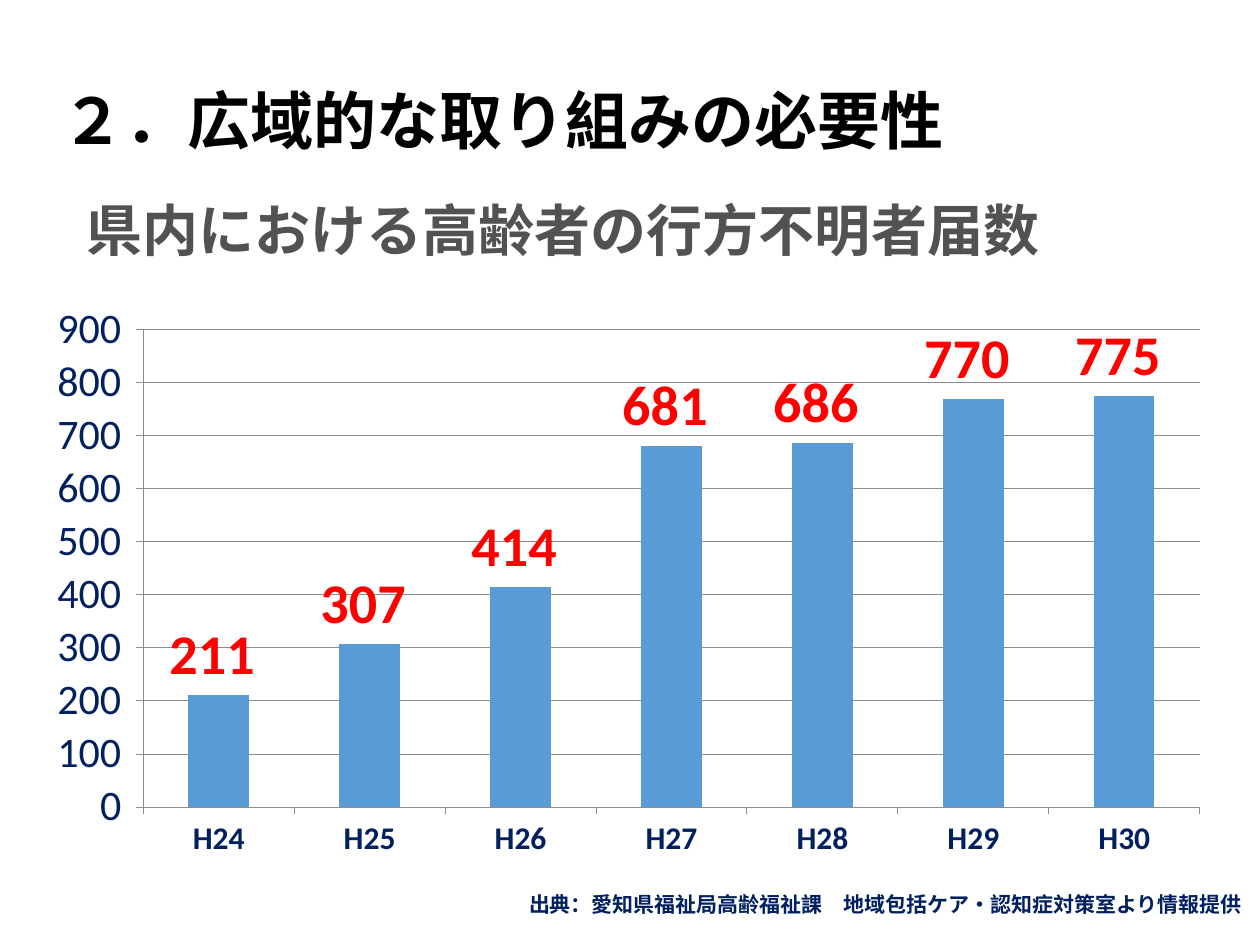
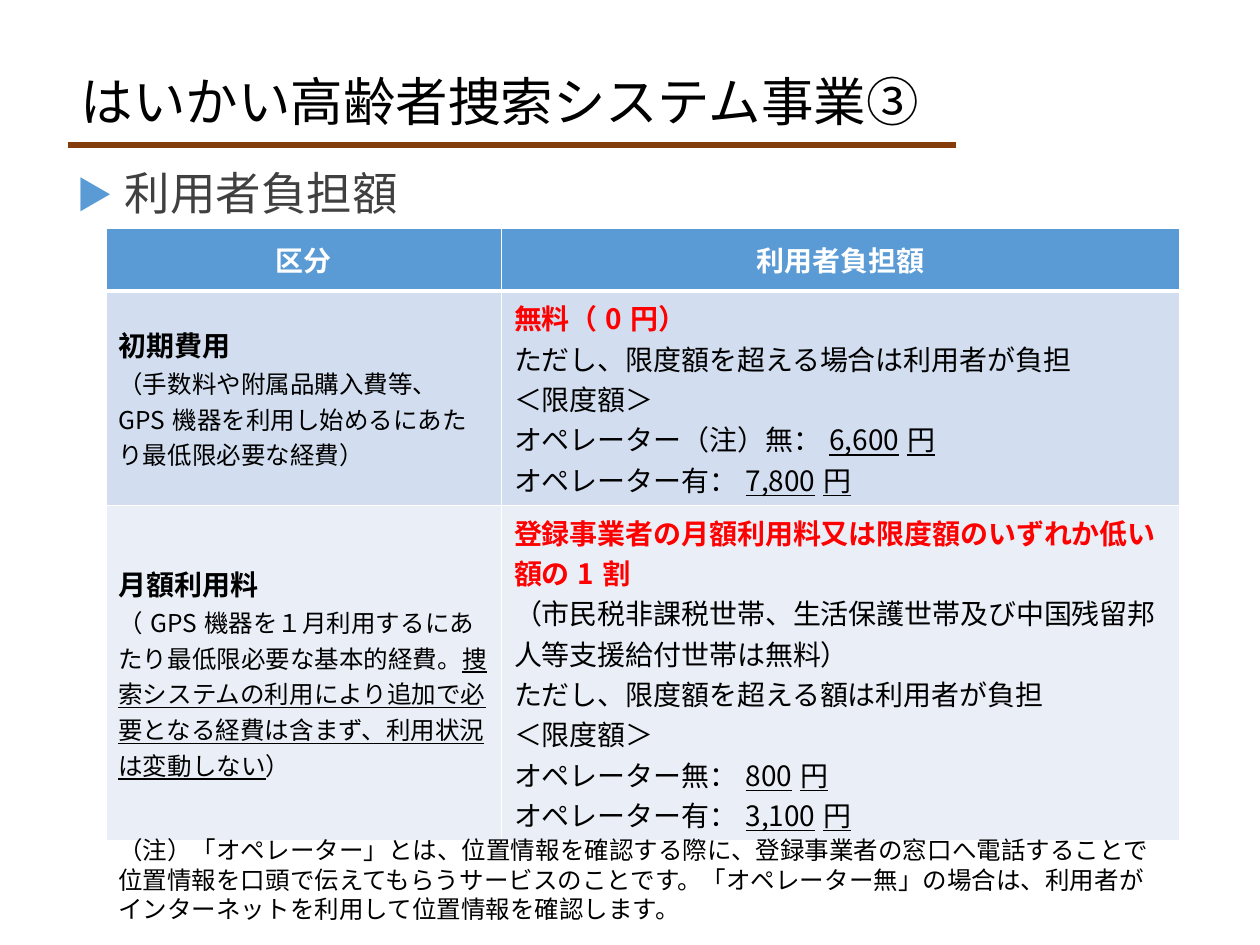
from dataclasses import dataclass
from typing import Any

from lxml import etree
from pptx import Presentation
from pptx.chart.data import CategoryChartData
from pptx.dml.color import RGBColor
from pptx.enum.chart import XL_CHART_TYPE, XL_LABEL_POSITION, XL_TICK_MARK
from pptx.enum.shapes import MSO_CONNECTOR
from pptx.enum.text import MSO_ANCHOR, MSO_AUTO_SIZE, PP_ALIGN
from pptx.oxml.ns import qn
from pptx.util import Inches, Pt

LEFT, CENTER, RIGHT = PP_ALIGN.LEFT, PP_ALIGN.CENTER, PP_ALIGN.RIGHT
TOP, MIDDLE = MSO_ANCHOR.TOP, MSO_ANCHOR.MIDDLE
FIXED, GROW = MSO_AUTO_SIZE.NONE, MSO_AUTO_SIZE.SHAPE_TO_FIT_TEXT
TICK_OUTSIDE = XL_TICK_MARK.OUTSIDE
COLUMN_CLUSTERED = XL_CHART_TYPE.COLUMN_CLUSTERED
OUTSIDE_END = XL_LABEL_POSITION.OUTSIDE_END
STRAIGHT = MSO_CONNECTOR.STRAIGHT

SLIDE_WIDTH, SLIDE_HEIGHT = Inches(10), Inches(7.5)
COLUMN, ROW = SLIDE_WIDTH / 100, SLIDE_HEIGHT / 75
TITLE_ONLY = 5
TEXT_FONT, CHART_FONT = "Noto Sans CJK JP", "Calibri"
COUNT_FORMAT = r"#,##0_);[Red]\(#,##0\)"
COLORS = {
    "black": "000000",
    "white": "FFFFFF",
    "subtitle": "525252",
    "body": "404040",
    "navy": "002060",
    "red": "FF0000",
    "accent": "5B9BD5",
    "rule": "843C0B",
    "axis": "8C8C8C",
    "initial": "D2DEEF",
    "monthly": "EAEFF7",
}


@dataclass(frozen=True)
class Box:
    column: float
    row: float
    columns: float
    rows: float

    def lengths(self) -> tuple[int, int, int, int]:
        return (int(self.column * COLUMN), int(self.row * ROW),
                int(self.columns * COLUMN), int(self.rows * ROW))


@dataclass(frozen=True)
class Line:
    """Every second segment is underlined."""
    segments: tuple[str, ...]
    size: float
    color: str = "black"
    bold: bool = False
    align: Any = LEFT
    spacing: float = 1.0
    bullet: str = ""


@dataclass(frozen=True)
class Cell:
    fill: str
    lines: tuple[Line, ...]


def rgb(name: str) -> RGBColor:
    return RGBColor.from_string(COLORS[name])


def style_font(font: Any, name: str, size: float, color: str, bold: bool = False) -> None:
    font.name = name
    font.size = Pt(size)
    font.bold = bold
    font.color.rgb = rgb(color)


def add_bullet(paragraph: Any, character: str) -> None:
    properties = paragraph._p.get_or_add_pPr()
    properties.set("marL", str(Inches(0.38)))
    properties.set("indent", str(Inches(-0.38)))
    color = etree.SubElement(properties, qn("a:buClr"))
    etree.SubElement(color, qn("a:srgbClr"), val=COLORS["accent"])
    etree.SubElement(properties, qn("a:buSzPct"), val="80000")
    etree.SubElement(properties, qn("a:buFont"), typeface=TEXT_FONT)
    etree.SubElement(properties, qn("a:buChar"), char=character)
    paragraph.space_before = Pt(10)


def write_lines(frame: Any, lines: tuple[Line, ...], anchor: Any = TOP) -> None:
    frame.word_wrap = True
    frame.vertical_anchor = anchor
    for index, line in enumerate(lines):
        paragraph = frame.add_paragraph() if index else frame.paragraphs[0]
        if line.bullet:
            add_bullet(paragraph, line.bullet)
        paragraph.alignment = line.align
        paragraph.line_spacing = line.spacing
        style_font(paragraph.font, TEXT_FONT, line.size, line.color, line.bold)
        defaults = paragraph._p.pPr.find(qn("a:defRPr"))
        etree.SubElement(defaults, qn("a:ea"), typeface=TEXT_FONT)
        for position, segment in enumerate(line.segments):
            run = paragraph.add_run()
            run.text = segment
            if position % 2:
                run.font.underline = True


def add_titled_slide(presentation: Any, box: Box, title: Line, anchor: Any) -> Any:
    slide = presentation.slides.add_slide(presentation.slide_layouts[TITLE_ONLY])
    shape = slide.shapes.title
    shape.left, shape.top, shape.width, shape.height = box.lengths()
    write_lines(shape.text_frame, (title,), anchor)
    shape.text_frame.auto_size = FIXED
    return slide


def add_text(slide: Any, box: Box, line: Line, auto_size: Any = GROW) -> Any:
    shape = slide.shapes.add_textbox(*box.lengths())
    write_lines(shape.text_frame, (line,))
    shape.text_frame.auto_size = auto_size
    return shape


def style_axis(axis: Any, size: float, bold: bool) -> None:
    axis.major_tick_mark = TICK_OUTSIDE
    style_font(axis.tick_labels.font, CHART_FONT, size, "navy", bold)
    style_line(axis.format.line, "axis", 0.5)


def style_line(line: Any, color: str, width: float) -> None:
    line.color.rgb = rgb(color)
    line.width = Pt(width)


def place_plot(chart: Any, x: float, y: float, w: float, h: float) -> None:
    area = chart._chartSpace.chart.plotArea
    for old_layout in area.findall(qn("c:layout")):
        area.remove(old_layout)
    layout = etree.Element(qn("c:layout"))
    manual = etree.SubElement(layout, qn("c:manualLayout"))
    settings = {"layoutTarget": "inner", "xMode": "edge", "yMode": "edge",
                "x": x, "y": y, "w": w, "h": h}
    for name, value in settings.items():
        etree.SubElement(manual, qn(f"c:{name}"), val=str(value))
    area.insert(0, layout)


def add_missing_reports_chart(slide: Any, box: Box) -> None:
    data = CategoryChartData()
    data.categories = [f"H{year}" for year in range(24, 31)]
    data.add_series("Series 1", (211, 307, 414, 681, 686, 770, 775))
    chart = slide.shapes.add_chart(COLUMN_CLUSTERED, *box.lengths(), data).chart
    chart.has_title = chart.has_legend = False
    style_font(chart.font, CHART_FONT, 18, "black")
    style_axis(chart.category_axis, 18, True)
    values = chart.value_axis
    style_axis(values, 24, False)
    values.minimum_scale, values.maximum_scale, values.major_unit = 0, 900, 100
    style_line(values.major_gridlines.format.line, "axis", 0.5)
    plot = chart.plots[0]
    plot.gap_width = 150
    plot.vary_by_categories = False
    fill = plot.series[0].format.fill
    fill.solid()
    fill.fore_color.rgb = rgb("accent")
    labels = plot.series[0].data_labels
    labels.show_value = True
    labels.position = OUTSIDE_END
    style_font(labels.font, CHART_FONT, 32, "red", True)
    for numbers in (values.tick_labels, labels):
        numbers.number_format = COUNT_FORMAT
        numbers.number_format_is_linked = False
    place_plot(chart, 0.085, 0.063, 0.895, 0.829)


def set_borders(cell: Any, bottom_width: float) -> None:
    properties = cell._tc.get_or_add_tcPr()
    widths = {"lnL": 1, "lnR": 1, "lnT": 1, "lnB": bottom_width}
    for index, (side, width) in enumerate(widths.items()):
        border = etree.Element(qn(f"a:{side}"), w=str(Pt(width)))
        fill = etree.SubElement(border, qn("a:solidFill"))
        etree.SubElement(fill, qn("a:srgbClr"), val=COLORS["white"])
        properties.insert(index, border)


def add_fee_table(slide: Any, box: Box, columns: tuple[float, ...],
                  rows: tuple[float, ...], cells: tuple[tuple[Cell, ...], ...]) -> None:
    table = slide.shapes.add_table(len(rows), len(columns), *box.lengths()).table
    for column, width in zip(table.columns, columns):
        column.width = int(width * COLUMN)
    for row, height in zip(table.rows, rows):
        row.height = int(height * ROW)
    for row_index, row_cells in enumerate(cells):
        for column_index, content in enumerate(row_cells):
            cell = table.cell(row_index, column_index)
            cell.fill.solid()
            cell.fill.fore_color.rgb = rgb(content.fill)
            write_lines(cell.text_frame, content.lines)
            cell.vertical_anchor = MIDDLE
            set_borders(cell, 1 if row_index else 3)


def header(text: str) -> Cell:
    return Cell("accent", (Line((text,), 16, "white", True, CENTER),))


def category(fill: str, name: str, *explanation: str) -> Cell:
    return Cell(fill, (Line((name,), 16, bold=True), Line(explanation, 14)))


def charge(fill: str, headline: str, *details: tuple[str, ...]) -> Cell:
    return Cell(fill, (Line((headline,), 16, "red", True),
                       *(Line(detail, 16) for detail in details)))


FEE_CELLS = (
    (header("区分"), header("利用者負担額")),
    (
        category("initial", "初期費用",
                 "（手数料や附属品購入費等、GPS機器を利用し始めるにあたり最低限必要な経費）"),
        charge("initial", "無料（0円）",
               ("ただし、限度額を超える場合は利用者が負担",),
               ("＜限度額＞",),
               ("オペレーター（注）無：", "6,600円"),
               ("オペレーター有：", "7,800円")),
    ),
    (
        category("monthly", "月額利用料",
                 "（GPS機器を１月利用するにあたり最低限必要な基本的経費。",
                 "捜索システムの利用により追加で必要となる経費は含まず、利用状況は変動しない",
                 "）"),
        charge("monthly", "登録事業者の月額利用料又は限度額のいずれか低い額の1割",
               ("（市民税非課税世帯、生活保護世帯及び中国残留邦人等支援給付世帯は無料）",),
               ("ただし、限度額を超える額は利用者が負担",),
               ("＜限度額＞",),
               ("オペレーター無：", "800円"),
               ("オペレーター有：", "3,100円")),
    ),
)
OPERATOR_NOTE = (
    "（注）「オペレーター」とは、位置情報を確認する際に、登録事業者の窓口へ電話することで"
    "位置情報を口頭で伝えてもらうサービスのことです。「オペレーター無」の場合は、"
    "利用者がインターネットを利用して位置情報を確認します。"
)


def build_reports_slide(presentation: Any) -> None:
    title = Line(("２．広域的な取り組みの必要性",), 36, bold=True)
    slide = add_titled_slide(presentation, Box(3.9, 6, 92.1, 7.1), title, TOP)
    add_text(slide, Box(5.9, 15, 80.4, 6.4),
             Line(("県内における高齢者の行方不明者届数",), 32, "subtitle", True))
    add_missing_reports_chart(slide, Box(3.4, 23.3, 93.7, 45.7))
    source = "出典：愛知県福祉局高齢福祉課　地域包括ケア・認知症対策室より情報提供"
    add_text(slide, Box(2.9, 69.3, 96.7, 4),
             Line((source,), 12, "navy", True, RIGHT, 1.5))


def build_fees_slide(presentation: Any) -> None:
    title = Line(("はいかい高齢者捜索システム事業③",), 30, spacing=0.9)
    slide = add_titled_slide(presentation, Box(5.4, 5, 75.3, 6.6), title, MIDDLE)
    left, top, width, _ = Box(5.4, 11.5, 70.5, 0).lengths()
    rule = slide.shapes.add_connector(STRAIGHT, left, top, left + width, top)
    style_line(rule.line, "rule", 3)
    etree.SubElement(rule._element.spPr, qn("a:effectLst"))
    heading = add_text(slide, Box(5.4, 12.7, 91, 5.8),
                       Line(("利用者負担額",), 26, "body", bullet="▶"), FIXED)
    frame = heading.text_frame
    frame.margin_left = frame.margin_right = Inches(0.07)
    frame.margin_top = frame.margin_bottom = Inches(0.04)
    add_fee_table(slide, Box(8.4, 18.1, 85.2, 46.2), (31.4, 53.8),
                  (5, 16.7, 24.5), FEE_CELLS)
    add_text(slide, Box(8.4, 65.8, 85.2, 8.1), Line((OPERATOR_NOTE,), 14))


def main() -> None:
    presentation = Presentation()
    presentation.slide_width, presentation.slide_height = SLIDE_WIDTH, SLIDE_HEIGHT
    build_reports_slide(presentation)
    build_fees_slide(presentation)
    presentation.save("out.pptx")


if __name__ == "__main__":
    main()
